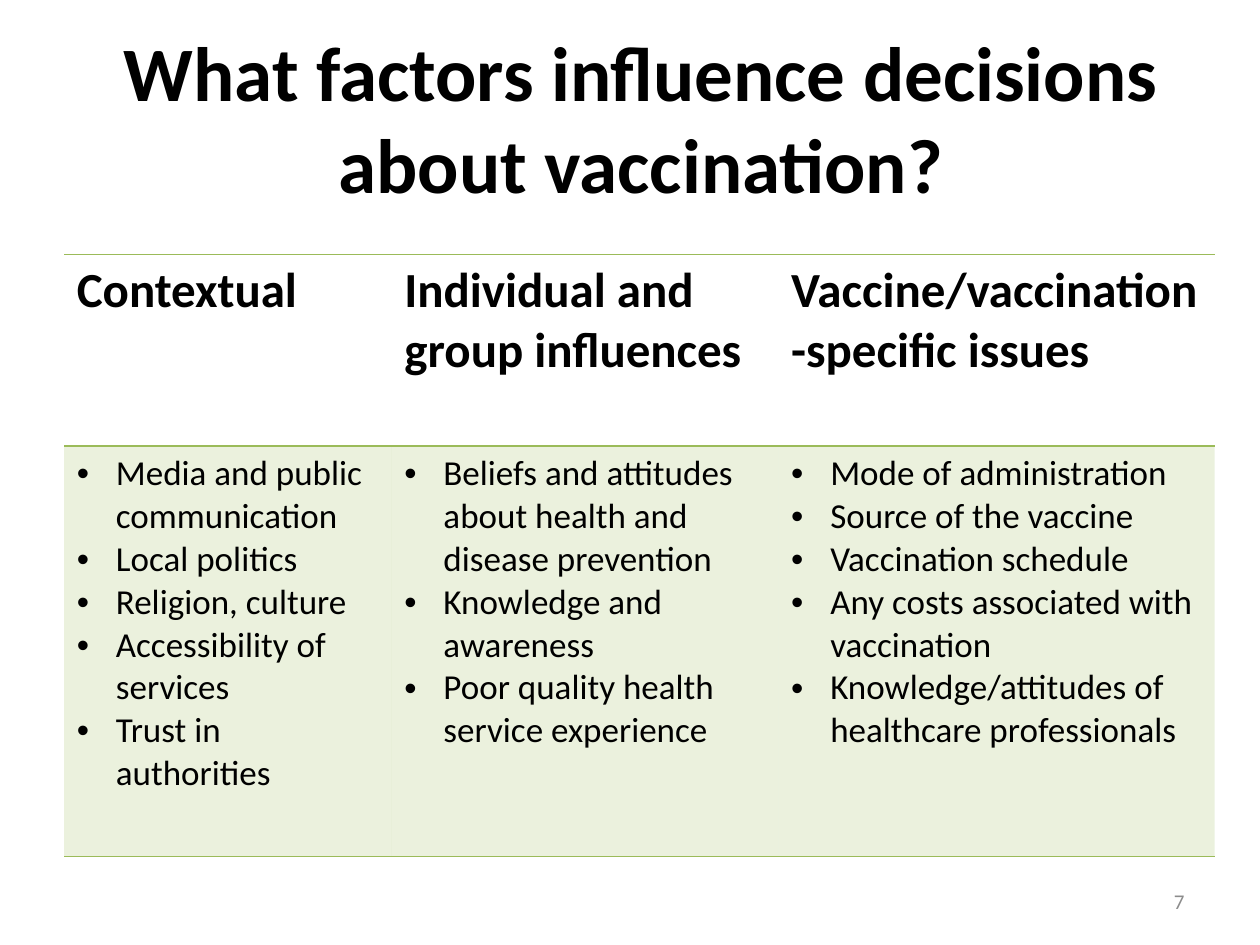
from dataclasses import dataclass

from lxml import etree
from pptx import Presentation
from pptx.dml.color import RGBColor
from pptx.enum.text import MSO_ANCHOR, PP_ALIGN
from pptx.oxml.ns import qn
from pptx.util import Inches, Pt

LEFT, CENTER, RIGHT = PP_ALIGN.LEFT, PP_ALIGN.CENTER, PP_ALIGN.RIGHT
MIDDLE = MSO_ANCHOR.MIDDLE
PLAIN_TABLE = "{2D5ABB26-0587-4C30-8999-92F81FD0307C}"

TITLE = "What factors influence decisions about vaccination?"
FACTORS = {
    "Contextual": [
        "Media and public communication",
        "Local politics",
        "Religion, culture",
        "Accessibility of services",
        "Trust in authorities",
    ],
    "Individual and group influences": [
        "Beliefs and attitudes about health and disease prevention",
        "Knowledge and awareness",
        "Poor quality health service experience",
    ],
    "Vaccine/vaccination -specific issues": [
        "Mode of administration",
        "Source of the vaccine",
        "Vaccination schedule",
        "Any costs associated with vaccination",
        "Knowledge/attitudes of healthcare professionals",
    ],
}


@dataclass(frozen=True)
class Theme:
    """Colours, type sizes and measures of the slide."""

    font: str = "Calibri"
    ink: str = "000000"
    muted: str = "8C8C8C"
    accent: str = "9BBB59"
    tint: int = 20
    title: int = 44
    heading: int = 28
    body: int = 20
    number: int = 12
    rule: int = 1
    indent: float = 0.31


class SlideBuilder:
    """Draws styled elements on a slide grid of 100 columns and 75 rows."""

    def __init__(self, deck, theme):
        """Add a blank slide and set the grid unit."""
        self.theme = theme
        self.slide = deck.slides.add_slide(deck.slide_layouts[6])
        self.column = deck.slide_width / 100
        self.row = deck.slide_height / 75

    def place(self, left, top, width, height):
        """Turn grid columns and rows into lengths."""
        return (round(left * self.column), round(top * self.row),
                round(width * self.column), round(height * self.row))

    def set_lines(self, frame, lines, size, color, bold=False, align=LEFT):
        """Fill a text frame with one styled paragraph per line."""
        frame.word_wrap = True
        frame.text = "\n".join(lines)
        for para in frame.paragraphs:
            para.alignment = align
            for span in para.runs:
                span.font.name = self.theme.font
                span.font.size = Pt(size)
                span.font.bold = bold
                span.font.color.rgb = RGBColor.from_string(color)

    def text(self, area, line, size, color, bold=False, align=LEFT):
        """Add a vertically centred text box."""
        box = self.slide.shapes.add_textbox(*self.place(*area))
        box.text_frame.vertical_anchor = MIDDLE
        self.set_lines(box.text_frame, [line], size, color, bold, align)

    def bullets(self, frame):
        """Give each paragraph a bullet with a hanging indent."""
        indent = Inches(self.theme.indent)
        for para in frame.paragraphs:
            properties = para._p.get_or_add_pPr()
            properties.set("marL", str(indent))
            properties.set("indent", str(-indent))
            etree.SubElement(properties, qn("a:buFont"), typeface="Arial")
            etree.SubElement(properties, qn("a:buChar"), char="•")

    def border(self, cell, side):
        """Draw an accent line on one side of a cell."""
        line = etree.SubElement(cell._tc.get_or_add_tcPr(), qn(f"a:ln{side}"),
                                w=str(Pt(self.theme.rule)))
        fill = etree.SubElement(line, qn("a:solidFill"))
        etree.SubElement(fill, qn("a:srgbClr"), val=self.theme.accent)

    def tint(self, cell):
        """Fill a cell with the translucent accent colour."""
        cell.fill.solid()
        cell.fill.fore_color.rgb = RGBColor.from_string(self.theme.accent)
        color = cell._tc.tcPr.find(f"{qn('a:solidFill')}/{qn('a:srgbClr')}")
        etree.SubElement(color, qn("a:alpha"), val=str(self.theme.tint * 1000))

    def table(self, left, top, widths, heights, factors):
        """Add a table with one heading and one bullet list per column."""
        theme = self.theme
        area = self.place(left, top, sum(widths), sum(heights))
        table = self.slide.shapes.add_table(
            len(heights), len(widths), *area).table
        table.first_row = table.horz_banding = False
        table._tbl.tblPr.find(qn("a:tableStyleId")).text = PLAIN_TABLE
        for column, width in zip(table.columns, widths):
            column.width = round(width * self.column)
        for row, height in zip(table.rows, heights):
            row.height = round(height * self.row)
        for index, (heading, items) in enumerate(factors.items()):
            head, body = table.cell(0, index), table.cell(1, index)
            self.set_lines(head.text_frame, [heading], theme.heading, theme.ink, True)
            self.set_lines(body.text_frame, items, theme.body, theme.ink)
            self.bullets(body.text_frame)
            for cell in (head, body):
                self.border(cell, "T")
                self.border(cell, "B")
            head.fill.background()
            self.tint(body)


def main():
    """Build and save the slide."""
    deck = Presentation()
    deck.slide_width, deck.slide_height = Inches(10), Inches(7.5)
    theme = Theme()
    page = SlideBuilder(deck, theme)
    page.text((5.9, 3, 90, 12.5), TITLE, theme.title, theme.ink, True, CENTER)
    page.table(5.1, 20.2, (26, 30.7, 34.6), (15.2, 32.6), FACTORS)
    page.text((71.7, 69.5, 23.3, 4), "7", theme.number, theme.muted, align=RIGHT)
    deck.save("out.pptx")


if __name__ == "__main__":
    main()
